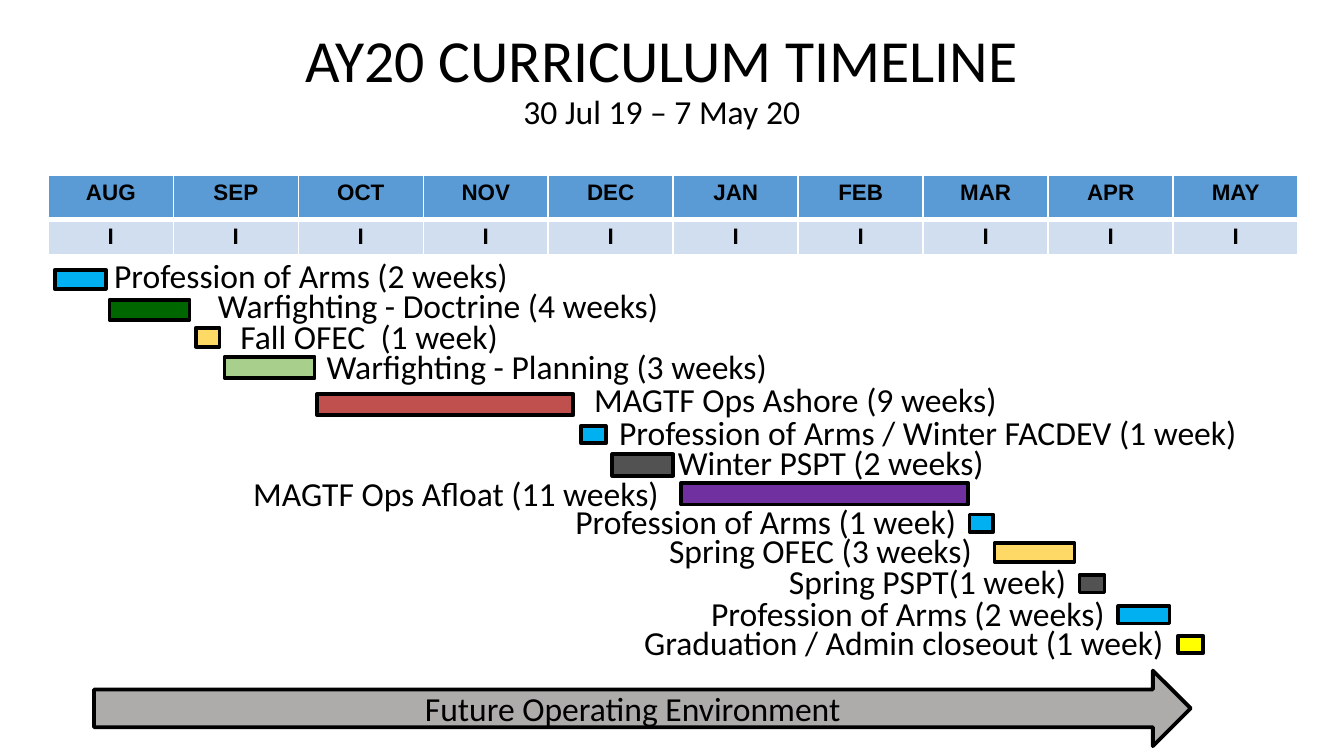
from dataclasses import dataclass

import pptx
import pptx.dml.color
import pptx.enum.shapes
import pptx.enum.text
import pptx.oxml
import pptx.oxml.ns
import pptx.util

Inches = pptx.util.Inches
Pt = pptx.util.Pt
Align = pptx.enum.text.PP_ALIGN
Anchor = pptx.enum.text.MSO_ANCHOR
Shape = pptx.enum.shapes.MSO_SHAPE


@dataclass(frozen=True)
class Theme:
    body_font: str = "Calibri"
    table_font: str = "Arial"
    title_size: int = 32
    body_size: int = 18
    table_size: int = 12
    outline: int = 2
    black: str = "000000"
    white: str = "FFFFFF"
    header: str = "5B9BD5"
    band: str = "D0DEEF"
    arrow: str = "AEABAB"
    profession: str = "00B0F0"
    doctrine: str = "006600"
    exercise: str = "FFD966"
    planning: str = "A8D08C"
    ashore: str = "C0504D"
    afloat: str = "7030A0"
    break_period: str = "525252"
    graduation: str = "FFFF00"


THEME = Theme()

# Month columns and schedule rows, in inches
GRID_LEFT, COLUMN = 0.36, 0.93
GRID_TOP, ROW = 1.85, 2.73 / 12
TABLE_TOP, TABLE_ROWS = 1.3, (0.33, 0.26)

MONTHS = ["AUG", "SEP", "OCT", "NOV", "DEC", "JAN", "FEB", "MAR", "APR", "MAY"]

# Label, colour, bar (column, row, columns, rows), label (column, row, columns), alignment
ACTIVITIES = [
    ("Profession of Arms (2 weeks)", THEME.profession,
     (0.05, 0.7, 0.41, 0.62), (0.42, 0, 5.69), Align.LEFT),
    ("Warfighting - Doctrine (4 weeks)", THEME.doctrine,
     (0.49, 1.67, 0.64, 0.66), (1.25, 0.97, 4.09), Align.LEFT),
    ("Fall OFEC  (1 week)", THEME.exercise,
     (1.18, 2.59, 0.19, 0.62), (1.43, 1.98, 2.33), Align.LEFT),
    ("Warfighting - Planning (3 weeks)", THEME.planning,
     (1.41, 3.54, 0.72, 0.7), (2.12, 2.97, 4.22), Align.LEFT),
    ("MAGTF Ops Ashore (9 weeks)", THEME.ashore,
     (2.15, 4.75, 2.05, 0.7), (4.26, 4.04, 3.47), Align.LEFT),
    ("Profession of Arms / Winter FACDEV (1 week)", THEME.profession,
     (4.26, 5.8, 0.2, 0.57), (4.46, 5.12, 5.31), Align.LEFT),
    ("Winter PSPT (2 weeks)", THEME.break_period,
     (4.51, 6.73, 0.49, 0.7), (4.93, 6.11, 2.86), Align.LEFT),
    ("MAGTF Ops Afloat (11 weeks)", THEME.afloat,
     (5.06, 7.67, 2.3, 0.7), (1.45, 7.12, 3.54), Align.RIGHT),
    ("Profession of Arms (1 week)", THEME.profession,
     (7.37, 8.7, 0.19, 0.57), (3.91, 8.02, 3.46), Align.RIGHT),
    ("Spring OFEC (3 weeks)", THEME.exercise,
     (7.57, 9.63, 0.64, 0.62), (4.86, 8.97, 2.96), Align.LEFT),
    ("Spring PSPT(1 week)", THEME.break_period,
     (8.25, 10.68, 0.2, 0.57), (4.79, 10, 3.46), Align.RIGHT),
    ("Profession of Arms (2 weeks)", THEME.profession,
     (8.56, 11.69, 0.41, 0.57), (4.8, 11.03, 3.76), Align.RIGHT),
    ("Graduation / Admin closeout (1 week)", THEME.graduation,
     (9.04, 12.66, 0.2, 0.57), (4.63, 12, 4.4), Align.RIGHT),
]


def color(value):
    return pptx.dml.color.RGBColor.from_string(value)


def grid_box(column, row, columns, rows):
    return (Inches(GRID_LEFT + column * COLUMN), Inches(GRID_TOP + row * ROW),
            Inches(columns * COLUMN), Inches(rows * ROW))


class TimelineSlide:
    def __init__(self, presentation, theme):
        self.theme = theme
        self.width = presentation.slide_width
        self.height = presentation.slide_height
        self.slide = presentation.slides.add_slide(presentation.slide_layouts[5])

    def percent_box(self, left, top, width, height):
        return (int(left * self.width / 100), int(top * self.height / 100),
                int(width * self.width / 100), int(height * self.height / 100))

    def style(self, paragraph, alignment, size=None, font=None, bold=False):
        paragraph.alignment = alignment
        paragraph.font.name = font or self.theme.body_font
        paragraph.font.size = Pt(size or self.theme.body_size)
        paragraph.font.bold = bold
        paragraph.font.color.rgb = color(self.theme.black)

    def title(self, heading, dates, box):
        shape = self.slide.shapes.title
        shape.left, shape.top, shape.width, shape.height = self.percent_box(*box)
        frame = shape.text_frame
        frame.auto_size = pptx.enum.text.MSO_AUTO_SIZE.NONE
        frame.vertical_anchor = Anchor.MIDDLE
        paragraph = frame.paragraphs[0]
        paragraph.add_run().text = heading
        paragraph.add_line_break()
        date_run = paragraph.add_run()
        date_run.text = dates
        date_run.font.size = Pt(self.theme.body_size)
        paragraph.line_spacing = 0.9
        self.style(paragraph, Align.CENTER, self.theme.title_size)

    def block(self, kind, box, fill):
        shape = self.slide.shapes.add_shape(kind, *box)
        shape.shadow.inherit = False
        shape.fill.solid()
        shape.fill.fore_color.rgb = color(fill)
        shape.line.color.rgb = color(self.theme.black)
        shape.line.width = Pt(self.theme.outline)
        return shape

    def arrow(self, text, box):
        shape = self.block(Shape.RIGHT_ARROW, self.percent_box(*box), self.theme.arrow)
        shape.text_frame.vertical_anchor = Anchor.MIDDLE
        shape.text_frame.text = text
        self.style(shape.text_frame.paragraphs[0], Align.CENTER)

    def label(self, text, box, alignment):
        frame = self.slide.shapes.add_textbox(*box).text_frame
        frame.word_wrap = True
        frame.text = text
        self.style(frame.paragraphs[0], alignment)

    def cell_borders(self, cell, bottom):
        properties = cell._tc.get_or_add_tcPr()
        for side, points in (("L", 1), ("R", 1), ("T", 1), ("B", bottom)):
            properties.append(pptx.oxml.parse_xml(
                f'<a:ln{side} {pptx.oxml.ns.nsdecls("a")} w="{Pt(points)}"><a:solidFill>'
                f'<a:srgbClr val="{self.theme.white}"/></a:solidFill></a:ln{side}>'))

    def calendar(self, months):
        table = self.slide.shapes.add_table(
            2, len(months), Inches(GRID_LEFT), Inches(TABLE_TOP),
            Inches(COLUMN * len(months)), Inches(sum(TABLE_ROWS))).table
        for column in table.columns:
            column.width = Inches(COLUMN)
        rows = ((months, self.theme.header, 3), (["I"] * len(months), self.theme.band, 1))
        for row, (texts, fill, bottom) in enumerate(rows):
            table.rows[row].height = Inches(TABLE_ROWS[row])
            for column, text in enumerate(texts):
                cell = table.cell(row, column)
                cell.margin_top = cell.margin_bottom = Inches(0.04)
                self.cell_borders(cell, bottom)
                cell.fill.solid()
                cell.fill.fore_color.rgb = color(fill)
                cell.text = text
                self.style(cell.text_frame.paragraphs[0], Align.CENTER,
                           self.theme.table_size, self.theme.table_font, True)

    def activity(self, text, fill, bar, label, alignment):
        self.block(Shape.RECTANGLE, grid_box(*bar), fill)
        self.label(text, grid_box(*label, 1.32), alignment)


def main():
    presentation = pptx.Presentation()
    presentation.slide_width = Inches(10)
    presentation.slide_height = Inches(10 * 9 / 16)
    timeline = TimelineSlide(presentation, THEME)

    # Heading and overall theme arrow
    timeline.title("AY20 CURRICULUM TIMELINE", "30 Jul 19 – 7 May 20",
                   (13.5, 1.4, 71.5, 18.8))
    timeline.arrow("Future Operating Environment", (7, 88.7, 81.6, 10))

    # Month header and scheduled activities
    timeline.calendar(MONTHS)
    for activity in ACTIVITIES:
        timeline.activity(*activity)

    presentation.save("out.pptx")


if __name__ == "__main__":
    main()
